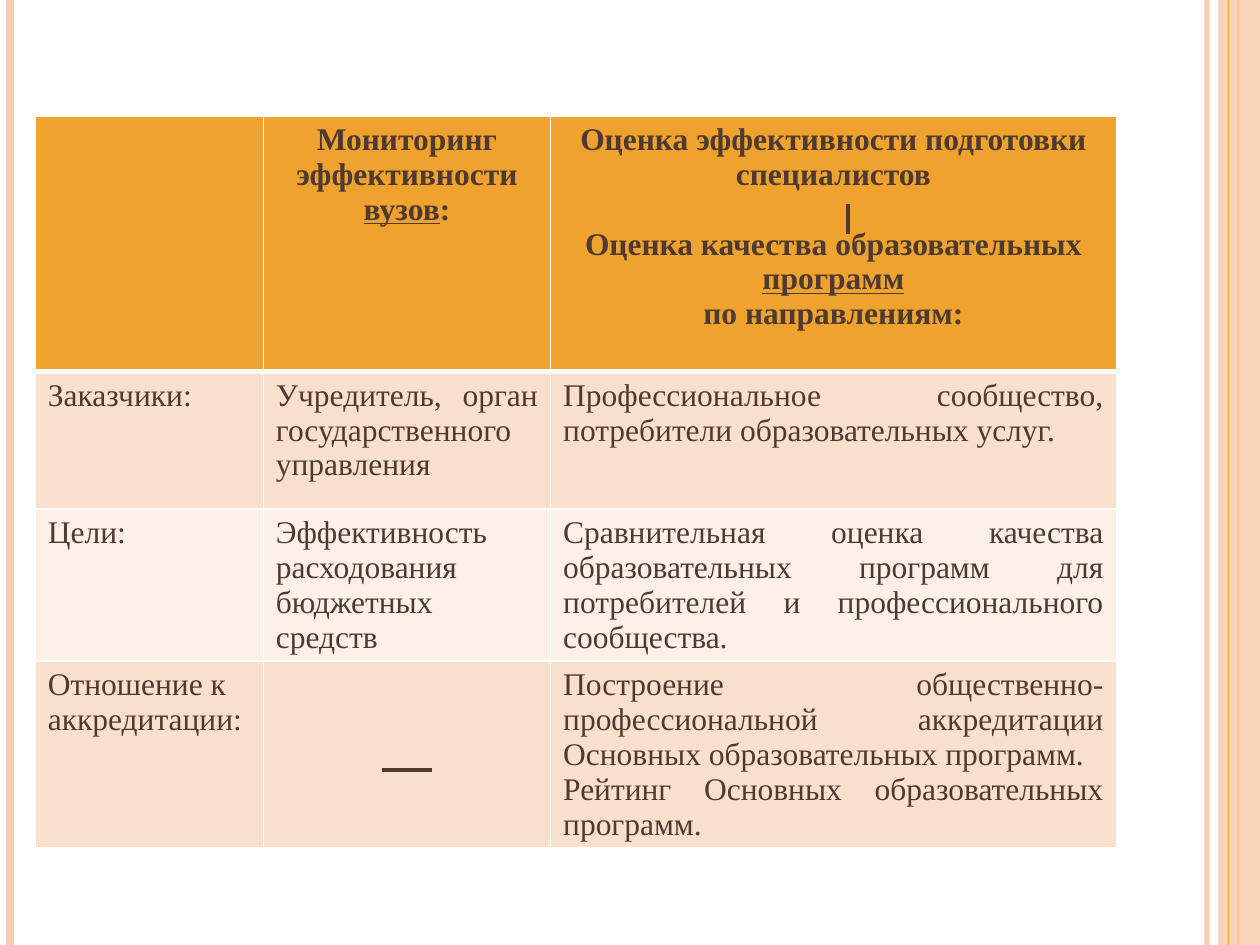
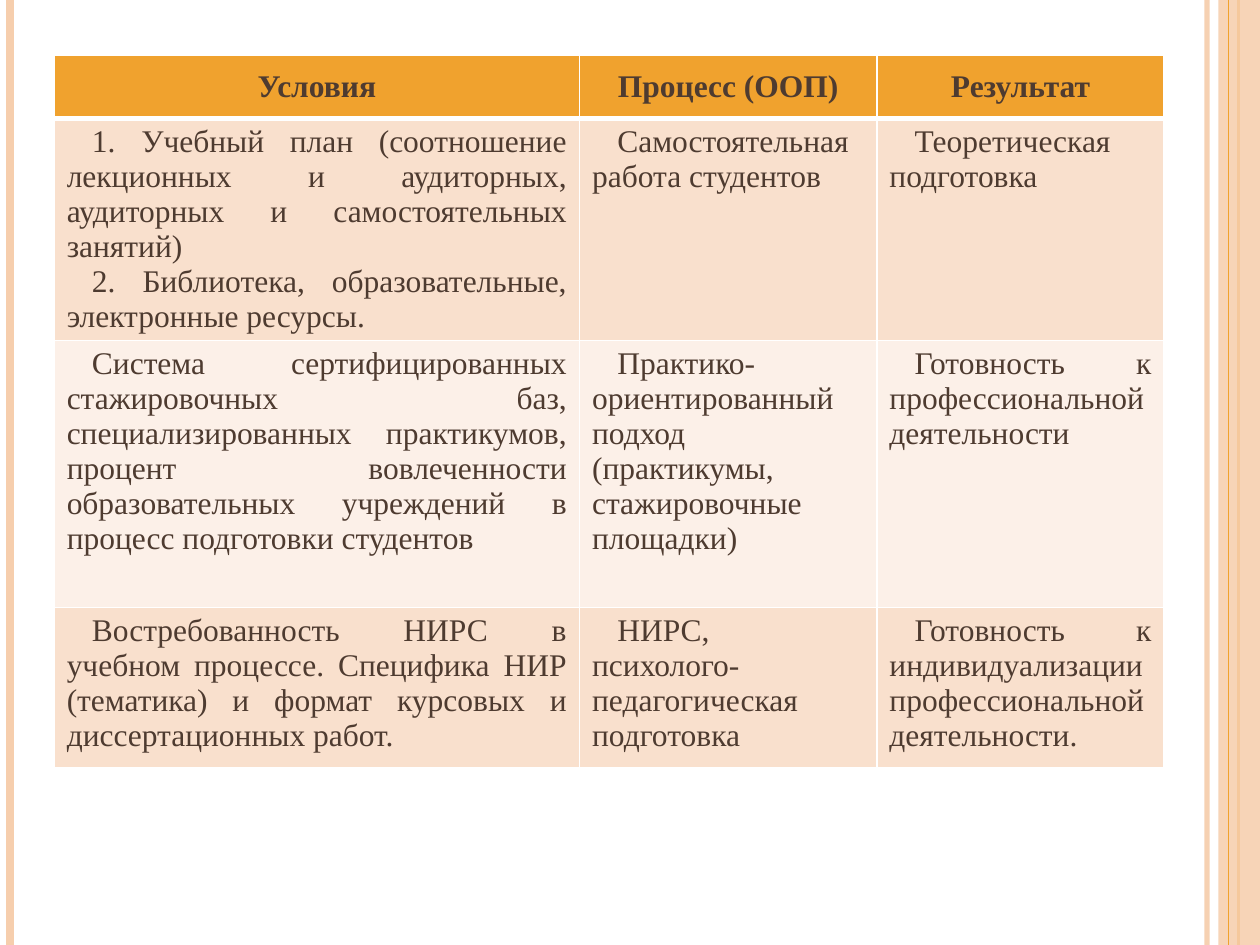
import pptx
import pptx.util
import pptx.dml.color
import pptx.enum.shapes
import pptx.enum.text
import pptx.oxml
import pptx.oxml.ns
from pptx.util import Inches

# Shared look
FONT, SIZE = "Times New Roman", 18
INK, GOLD, PEACH, WHITE = "4E3B30", "F0A22E", "F6CEAD", "FFFFFF"
BANDS = ["F9E0CD", "FCF0E8"]
ALIGN = {
    "left": pptx.enum.text.PP_ALIGN.LEFT,
    "center": pptx.enum.text.PP_ALIGN.CENTER,
    "just": pptx.enum.text.PP_ALIGN.JUSTIFY,
}

# Content: a cell is a list of paragraphs; _word_ is underlined
SLIDES = [
    {
        "at": (0.28, 0.92),
        "cols": [1.81, 2.28, 4.49],
        "rows": [2.03, 1.09, 1.2, 1.28],
        "aligns": ["left", "just", "just"],
        "indent": 0,
        "middle": False,
        "gap": {1: 20},  # points before a header paragraph
        "cells": [
            [[],
             ["Мониторинг эффективности _вузов_:"],
             ["Оценка эффективности подготовки специалистов",
              "Оценка качества образовательных _программ_",
              "по направлениям:"]],
            [["Заказчики:"],
             ["Учредитель, орган государственного управления"],
             ["Профессиональное сообщество, потребители образовательных услуг."]],
            [["Цели:"],
             ["Эффективность расходования бюджетных средств"],
             ["Сравнительная оценка качества образовательных программ для "
              "потребителей и профессионального сообщества."]],
            [["Отношение к аккредитации:"],
             [],
             ["Построение общественно-профессиональной аккредитации "
              "Основных образовательных программ.",
              "Рейтинг Основных образовательных программ."]],
        ],
        "marks": [(6.73, 1.62, 6.73, 1.86), (3.43, 6.11, 3.03, 6.11)],
    },
    {
        "at": (0.43, 0.44),
        "cols": [4.17, 2.36, 2.28],
        "rows": [0.5, 1.54, 2.12, 1.27],
        "aligns": ["just"] * 3,
        "indent": 0.2,
        "middle": True,
        "gap": {},
        "cells": [
            [["Условия"], ["Процесс (ООП)"], ["Результат"]],
            [["1. Учебный план (соотношение лекционных и аудиторных, "
              "аудиторных и самостоятельных занятий)",
              "2. Библиотека, образовательные, электронные ресурсы."],
             ["Самостоятельная работа студентов"],
             ["Теоретическая подготовка"]],
            [["Система сертифицированных стажировочных баз, "
              "специализированных практикумов, процент вовлеченности "
              "образовательных учреждений в процесс подготовки студентов"],
             ["Практико-ориентированный подход (практикумы, "
              "стажировочные площадки)"],
             ["Готовность к профессиональной деятельности"]],
            [["Востребованность НИРС в учебном процессе. Специфика НИР "
              "(тематика) и формат курсовых и диссертационных работ."],
             ["НИРС, психолого-педагогическая подготовка"],
             ["Готовность к индивидуализации профессиональной деятельности."]],
        ],
        "marks": [],
    },
]


def color(code):
    return pptx.dml.color.RGBColor.from_string(code)


def fade(shape, share):
    """Make the shape's colour partly clear; share is the opaque percent."""
    for node in shape._element.spPr.iter(pptx.oxml.ns.qn("a:srgbClr")):
        alpha = pptx.oxml.parse_xml(
            f'<a:alpha {pptx.oxml.ns.nsdecls("a")} val="{share * 1000}"/>')
        node.append(alpha)


def add_line(slide, ends, code, width, share=100):
    line = slide.shapes.add_connector(
        pptx.enum.shapes.MSO_CONNECTOR.STRAIGHT, *map(Inches, ends))
    line.line.color.rgb = color(code)
    line.line.width = pptx.util.Pt(width)
    line._element.spPr.append(pptx.oxml.parse_xml(
        f'<a:effectLst {pptx.oxml.ns.nsdecls("a")}/>'))
    if share < 100:
        fade(line, share)


def add_frame(slide):
    """Stripes down both sides."""
    def stripe(x, code, width, share=100):
        add_line(slide, (x, 0, x, 7.5), code, width, share)

    stripe(9.58, PEACH, 3, 93)
    stripe(0.08, PEACH, 4.5)
    stripe(9.83, GOLD, 1.5)
    band = slide.shapes.add_shape(
        pptx.enum.shapes.MSO_SHAPE.RECTANGLE,
        Inches(9.67), 0, Inches(0.33), Inches(7.5))
    band.shadow.inherit = False
    band.fill.solid()
    band.fill.fore_color.rgb = color(PEACH)
    band.line.fill.background()
    fade(band, 87)
    stripe(9.75, GOLD, 0.75)


def write(frame, texts, align="left", bold=False, indent=0, gap=None):
    for i, text in enumerate(texts):
        para = frame.paragraphs[0] if i == 0 else frame.add_paragraph()
        para.alignment = ALIGN[align]
        if indent:
            props = para._p.get_or_add_pPr()
            props.set("marL", "0")
            props.set("indent", str(Inches(indent)))
        if gap and i in gap:
            para.space_before = pptx.util.Pt(gap[i])
        for k, part in enumerate(text.split("_")):
            if not part:
                continue
            run = para.add_run()
            run.text = part
            run.font.name = FONT
            run.font.size = pptx.util.Pt(SIZE)
            run.font.bold = bold
            run.font.underline = k % 2 == 1
            run.font.color.rgb = color(INK)


def edge(cell, base):
    """White borders; base is the bottom width in points."""
    props = cell._tc.get_or_add_tcPr()
    for i, (side, width) in enumerate(zip("LRTB", (1, 1, 1, base))):
        props.insert(i, pptx.oxml.parse_xml(
            f'<a:ln{side} {pptx.oxml.ns.nsdecls("a")} w="{width * 12700}">'
            f'<a:solidFill><a:srgbClr val="{WHITE}"/></a:solidFill>'
            f'</a:ln{side}>'))


def add_grid(slide, data):
    cols, rows = data["cols"], data["rows"]
    size = (sum(cols), sum(rows))
    table = slide.shapes.add_table(
        len(rows), len(cols), *map(Inches, data["at"] + size)).table
    table.horz_banding = False
    for col, width in zip(table.columns, cols):
        col.width = Inches(width)
    for row, height in zip(table.rows, rows):
        row.height = Inches(height)
    for r, line in enumerate(data["cells"]):
        head = r == 0
        for c, texts in enumerate(line):
            cell = table.cell(r, c)
            cell.fill.solid()
            cell.fill.fore_color.rgb = color(GOLD if head else BANDS[(r - 1) % 2])
            edge(cell, 3 if head else 1)
            if head:
                if data["middle"]:
                    cell.vertical_anchor = pptx.enum.text.MSO_ANCHOR.MIDDLE
                write(cell.text_frame, texts, align="center", bold=True,
                      gap=data["gap"])
            else:
                write(cell.text_frame, texts, align=data["aligns"][c],
                      indent=data["indent"])


def main():
    deck = pptx.Presentation()
    deck.slide_width, deck.slide_height = Inches(10), Inches(7.5)
    for data in SLIDES:
        slide = deck.slides.add_slide(deck.slide_layouts[6])
        add_frame(slide)
        add_grid(slide, data)
        for ends in data["marks"]:
            add_line(slide, ends, INK, 2.25)
    deck.save("out.pptx")


if __name__ == "__main__":
    main()
